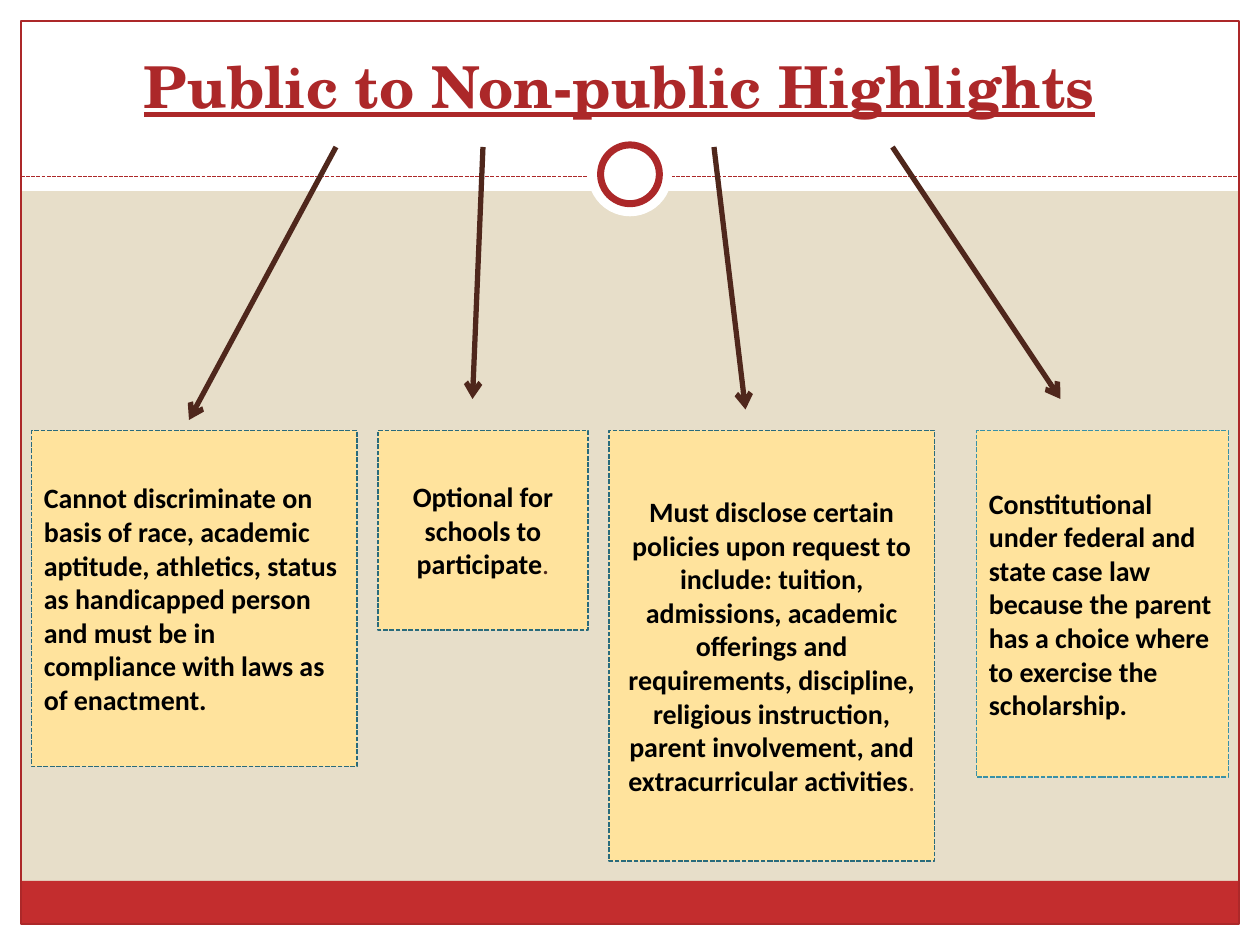
from dataclasses import dataclass

from lxml import etree
from pptx import Presentation
from pptx import util as u
from pptx.dml.color import RGBColor
from pptx.enum import dml, shapes, text
from pptx.oxml import ns

PX = 7620
WIDTH, HEIGHT, MARGIN = 1200, 900, 20
INNER = WIDTH - 2 * MARGIN
ARROW_TOP, CARD_TOP = 140, 410


@dataclass(frozen=True)
class Theme:
    """Colours, fonts and type sizes of the slide."""

    sand: str = "E7DEC9"
    white: str = "FFFFFF"
    band: str = "C32D2E"
    red: str = "AC2829"
    brown: str = "4F271C"
    card: str = "FFE39D"
    teal: str = "296B7C"
    bright_teal: str = "3891A7"
    black: str = "000000"
    title_font: str = "TeX Gyre Schola"
    body_font: str = "Calibri"
    title_size: int = 33
    body_size: int = 16


class Painter:
    """Draws styled elements on the current slide."""

    def __init__(self, page, theme):
        """Keep the slide and theme, and paint the background."""
        self.page, self.theme = page, theme
        page.background.fill.solid()
        page.background.fill.fore_color.rgb = RGBColor.from_string(theme.sand)

    def stroke(self, line, color, weight, dashed=False):
        """Style a line."""
        line.color.rgb = RGBColor.from_string(color)
        line.width = u.Pt(weight)
        if dashed:
            line.dash_style = dml.MSO_LINE.SQUARE_DOT

    def font(self, font, name, size, color, underline=None):
        """Style bold text."""
        font.name, font.size, font.bold = name, u.Pt(size), True
        font.underline = underline
        font.color.rgb = RGBColor.from_string(color)

    def shape(self, area, fill=None, line=None, weight=0.75, dashed=False,
              kind=shapes.MSO_SHAPE.RECTANGLE):
        """Add a preset shape and return it."""
        box = self.page.shapes.add_shape(kind, *(n * PX for n in area))
        box.shadow.inherit = False
        if fill:
            box.fill.solid()
            box.fill.fore_color.rgb = RGBColor.from_string(fill)
        else:
            box.fill.background()
        if line:
            self.stroke(box.line, line, weight, dashed)
        else:
            box.line.fill.background()
        return box

    def circle(self, center, size, **style):
        """Add a circle around a centre."""
        x, y = center
        area = (x - size // 2, y - size // 2, size, size)
        self.shape(area, kind=shapes.MSO_SHAPE.OVAL, **style)

    def line(self, start, end, color, weight, dashed=False, arrow=False):
        """Add a straight line, optionally with an arrowhead."""
        link = self.page.shapes.add_connector(
            shapes.MSO_CONNECTOR.STRAIGHT, *(n * PX for n in (*start, *end)))
        self.stroke(link.line, color, weight, dashed)
        if arrow:
            outline = link.line.fill._xPr
            etree.SubElement(outline, ns.qn("a:tailEnd"), type="arrow")
        etree.SubElement(link._element.spPr, ns.qn("a:effectLst"))

    def title(self, area, words):
        """Add the underlined slide title."""
        box = self.page.shapes.add_textbox(*(n * PX for n in area))
        frame = box.text_frame
        frame.word_wrap = True
        frame.vertical_anchor = text.MSO_ANCHOR.BOTTOM
        para = frame.paragraphs[0]
        para.text = words
        para.alignment = text.PP_ALIGN.CENTER
        self.font(para.font, self.theme.title_font, self.theme.title_size,
                  self.theme.red, True)

    def card(self, left, width, height, words, align, line, ending=""):
        """Add a dashed card of bold text with an optional light ending."""
        box = self.shape((left, CARD_TOP, width, height), self.theme.card,
                         line, 0.9, True)
        frame = box.text_frame
        frame.word_wrap = True
        frame.vertical_anchor = text.MSO_ANCHOR.MIDDLE
        para = frame.paragraphs[0]
        para.alignment = align
        self.font(para.font, self.theme.body_font, self.theme.body_size,
                  self.theme.black)
        para.add_run().text = words
        if ending:
            span = para.add_run()
            span.text = ending
            span.font.bold = False
            span.font.color.rgb = RGBColor.from_string(self.theme.brown)


def main():
    """Build and save the slide."""
    deck = Presentation()
    deck.slide_width, deck.slide_height = WIDTH * PX, HEIGHT * PX
    theme = Theme()
    painter = Painter(deck.slides.add_slide(deck.slide_layouts[6]), theme)

    for area in (
        (0, HEIGHT - MARGIN, WIDTH, MARGIN),
        (0, 0, WIDTH, 182),
        (0, 0, MARGIN, HEIGHT),
        (WIDTH - MARGIN, 0, MARGIN, HEIGHT),
    ):
        painter.shape(area, theme.white)
    painter.shape((MARGIN, 839, INNER, 41), theme.band)
    painter.shape((MARGIN, MARGIN, INNER, HEIGHT - 2 * MARGIN), line=theme.red)
    painter.line((MARGIN, 168), (WIDTH - MARGIN, 168), theme.red, 0.75, True)
    center = (WIDTH // 2, 166)
    painter.circle(center, 80, fill=theme.white)
    painter.circle(center, 56, fill=theme.white, line=theme.red, weight=4)
    painter.title((50, 30, 1080, 90), "Public to Non-public Highlights")

    left, middle = text.PP_ALIGN.LEFT, text.PP_ALIGN.CENTER
    for card in (
        (360, 200, 190, "Optional for schools to participate",
         middle, theme.teal, "."),
        (580, 310, 410, "Must disclose certain policies upon request to "
         "include: tuition, admissions, academic offerings and requirements, "
         "discipline, religious instruction, parent involvement, and "
         "extracurricular activities", middle, theme.teal, "."),
        (30, 310, 320, "Cannot discriminate on basis of race, academic "
         "aptitude, athletics, status as handicapped person and must be in "
         "compliance with laws as of enactment.", left, theme.teal),
        (930, 240, 330, "Constitutional under federal and state case law "
         "because the parent has a choice where to exercise the scholarship.",
         left, theme.bright_teal),
    ):
        painter.card(*card)

    for start, *end in ((320, 180, 400), (460, 450, 380),
                        (680, 710, 390), (850, 1010, 380)):
        painter.line((start, ARROW_TOP), end, theme.brown, 3, arrow=True)

    deck.save("out.pptx")


if __name__ == "__main__":
    main()
